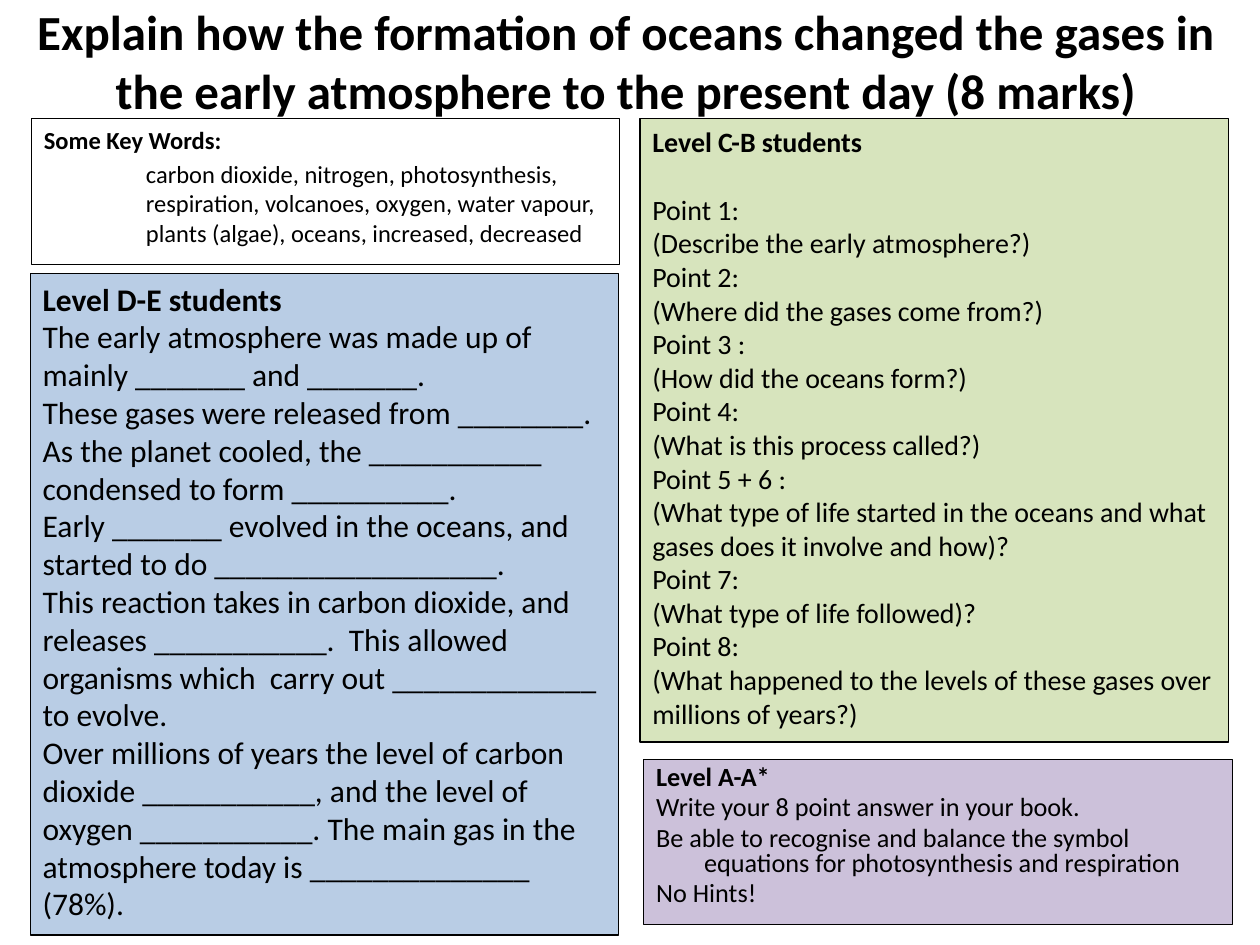
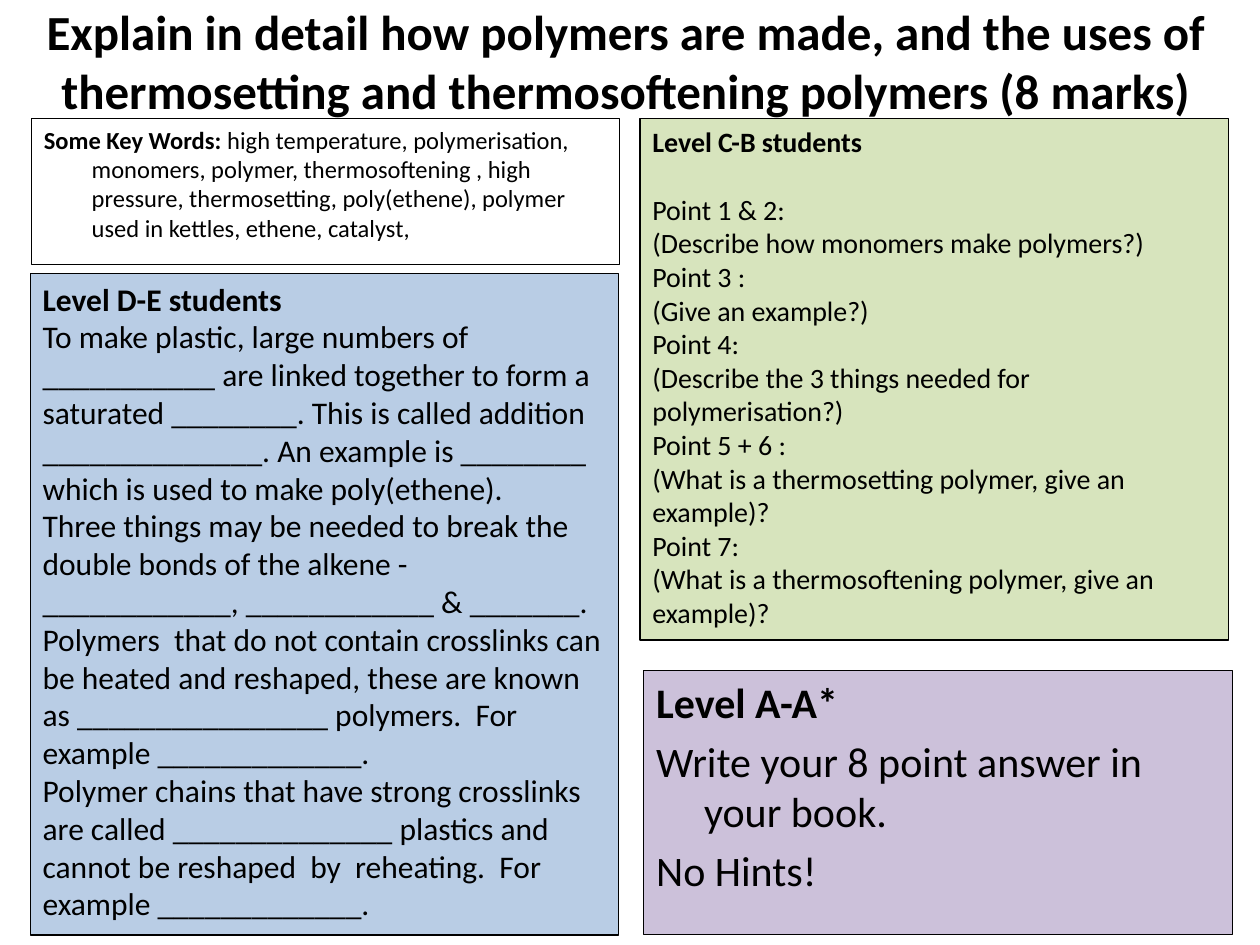
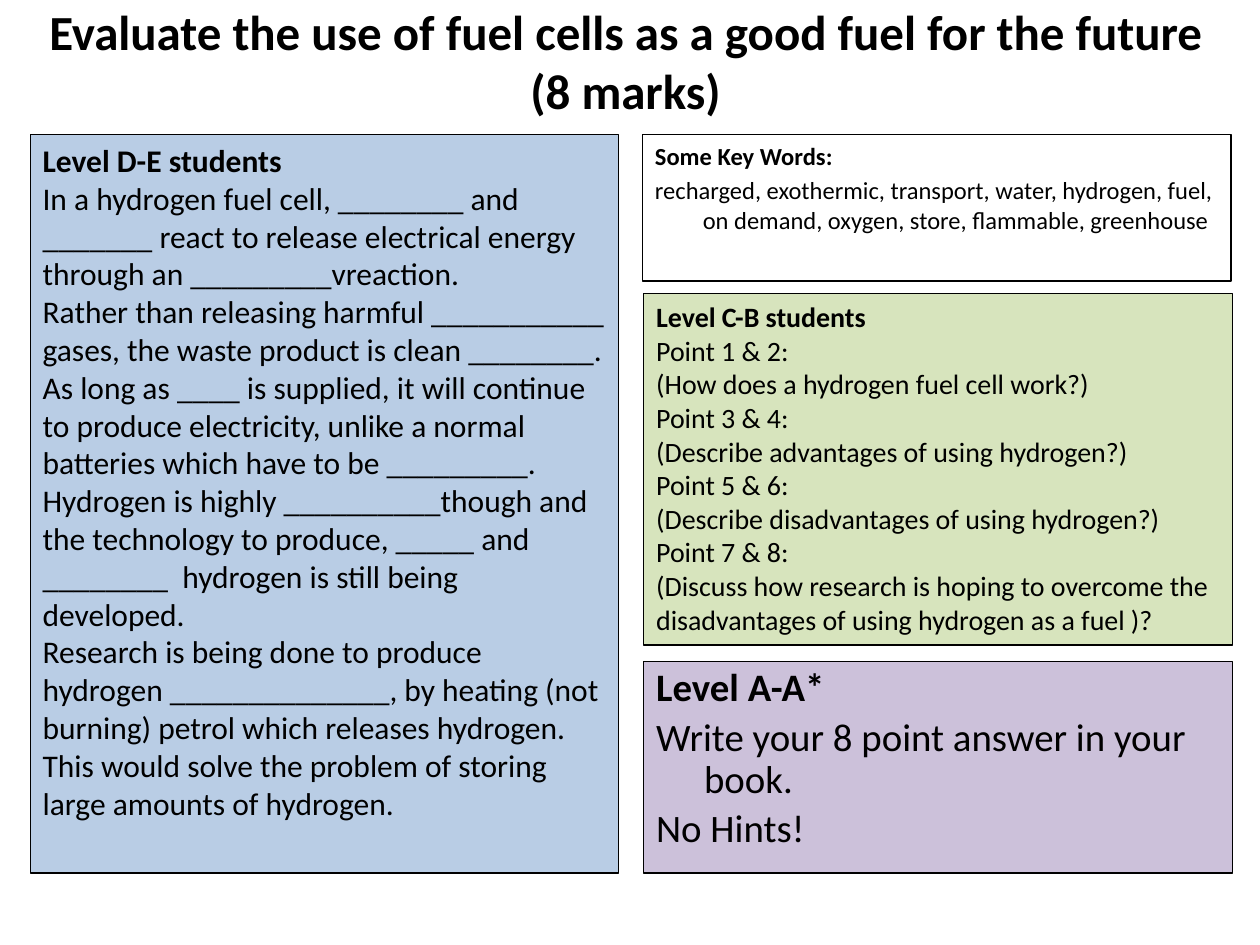
import dataclasses

import pptx
import pptx.dml.color
import pptx.enum.shapes
import pptx.enum.text
import pptx.util


@dataclasses.dataclass(frozen=True)
class Theme:
    font: str = "Calibri"
    ink: str = "000000"
    blue: str = "B9CDE5"
    green: str = "D7E4BD"
    purple: str = "CCC1DA"
    title_size: float = 28
    keyword_size: float = 14
    gap_fill_size: float = 18
    points_size: float = 16
    border: float = 0.75
    hanging: float = 0.38
    space_share: float = 0.2
    line_height: float = 1.22


THEME = Theme()
COLUMNS, ROWS = 100, 75
PANEL_WIDTH = 46.7
LEFT, RIGHT = 2.4, 51.1


def add_text(frame, text, size, lead="", bold=False, align=None, margin=0, hanging=0,
             before=0, after=0, line_spacing=None):
    """Append a paragraph, optionally opened by a bold lead."""
    para = frame.paragraphs[0]
    if para.runs:
        para = frame.add_paragraph()
    para.alignment = align or pptx.enum.text.PP_ALIGN.LEFT
    para.space_before = pptx.util.Pt(before)
    para.space_after = pptx.util.Pt(after)
    if line_spacing:
        para.line_spacing = line_spacing
    properties = para._p.get_or_add_pPr()
    properties.set("marL", str(pptx.util.Inches(margin + hanging)))
    properties.set("indent", str(-pptx.util.Inches(hanging)))

    def add_span(content, is_bold):
        span = para.add_run()
        span.text = content
        span.font.name = THEME.font
        span.font.size = pptx.util.Pt(size)
        span.font.bold = is_bold
        span.font.color.rgb = pptx.dml.color.RGBColor.from_string(THEME.ink)

    if lead:
        add_span(lead, True)
    for number, line in enumerate(text.split("\n")):
        if number:
            para.add_line_break()
        if line:
            add_span(line, bold)


class Worksheet:
    """Builds question pages on a grid of columns and rows."""

    def __init__(self):
        self.deck = pptx.Presentation()
        self.deck.slide_width = pptx.util.Inches(10)
        self.deck.slide_height = pptx.util.Inches(7.5)
        self.page = None

    def place(self, column, row, width, height):
        across = self.deck.slide_width / COLUMNS
        down = self.deck.slide_height / ROWS
        return round(column * across), round(row * down), round(width * across), round(height * down)

    def add_page(self, question):
        self.page = self.deck.slides.add_slide(self.deck.slide_layouts[6])
        box = self.page.shapes.add_textbox(*self.place(0.8, 1.7, 97.7, 6.2))
        box.text_frame.word_wrap = True
        box.text_frame.vertical_anchor = pptx.enum.text.MSO_ANCHOR.MIDDLE
        add_text(box.text_frame, question, THEME.title_size, bold=True,
                 align=pptx.enum.text.PP_ALIGN.CENTER)

    def add_panel(self, column, row, height, fill=None):
        box = self.page.shapes.add_shape(
            pptx.enum.shapes.MSO_SHAPE.RECTANGLE, *self.place(column, row, PANEL_WIDTH, height))
        box.shadow.inherit = False
        if fill:
            box.fill.solid()
            box.fill.fore_color.rgb = pptx.dml.color.RGBColor.from_string(fill)
        else:
            box.fill.background()
        box.line.color.rgb = pptx.dml.color.RGBColor.from_string(THEME.ink)
        box.line.width = pptx.util.Pt(THEME.border)
        box.text_frame.word_wrap = True
        box.text_frame.vertical_anchor = pptx.enum.text.MSO_ANCHOR.TOP
        return box.text_frame

    def add_keywords(self, column, row, words, inline=False, margin=0, hanging=THEME.hanging):
        frame = self.add_panel(column, row, 11.6)
        size = THEME.keyword_size
        before = size * THEME.space_share
        if inline:
            add_text(frame, words, size, lead="Some Key Words: ", hanging=hanging, before=before)
        else:
            add_text(frame, "Some Key Words:", size, bold=True, hanging=THEME.hanging, before=before)
            add_text(frame, words, size, margin=margin, hanging=hanging, before=before)

    def add_gap_fill(self, row, height, sentences):
        frame = self.add_panel(LEFT, row, height, THEME.blue)
        add_text(frame, "Level D-E students", THEME.gap_fill_size, bold=True)
        for sentence in sentences:
            add_text(frame, sentence, THEME.gap_fill_size)

    def add_points(self, column, row, height, points, heading_gap=True):
        frame = self.add_panel(column, row, height, THEME.green)
        size = THEME.points_size
        add_text(frame, "Level C-B students", size, bold=True,
                 after=size * THEME.line_height if heading_gap else 0)
        for label, hint in points:
            add_text(frame, label, size)
            add_text(frame, hint, size)

    def add_challenge(self, row, height, size, line_spacing=None, extra=()):
        frame = self.add_panel(RIGHT, row, height, THEME.purple)
        lines = ["Level A-A*", "Write your 8 point answer in your book.", *extra, "No Hints!"]
        for number, line in enumerate(lines):
            add_text(frame, line, size, bold=number == 0, hanging=THEME.hanging,
                     before=size * THEME.space_share, line_spacing=line_spacing)


def build_atmosphere(sheet):
    sheet.add_page("Explain how the formation of oceans changed the gases in the early atmosphere "
                   "to the present day (8 marks)")
    sheet.add_keywords(2.5, 9.4, "carbon dioxide, nitrogen, photosynthesis,  respiration, volcanoes, "
                       "oxygen, water vapour, plants (algae), oceans, increased, decreased",
                       margin=0.81, hanging=0)
    sheet.add_gap_fill(21.7, 52.5, [
        "The early atmosphere was made up of mainly _______ and _______.",
        "These gases were released from ________.",
        "As the planet cooled, the ___________ condensed to form __________.",
        "Early _______ evolved in the oceans, and started to do __________________.",
        "This reaction takes in carbon dioxide, and releases ___________.  This allowed organisms "
        "which  carry out _____________ to evolve.",
        "Over millions of years the level of carbon dioxide ___________, and the level of oxygen "
        "___________. The main gas in the atmosphere today is ______________ (78%).",
    ])
    sheet.add_points(50.8, 9.4, 49.5, [
        ("Point 1:", "(Describe the early atmosphere?)"),
        ("Point 2:", "(Where did the gases come from?)"),
        ("Point 3 :", "(How did the oceans form?)"),
        ("Point 4:", "(What is this process called?)"),
        ("Point 5 + 6 :", "(What type of life started in the oceans and what gases does it "
                          "involve and how)?"),
        ("Point 7:", "(What type of life followed)?"),
        ("Point 8:", "(What happened to the levels of these gases over millions of years?)"),
    ])
    sheet.add_challenge(60.3, 13.1, 15, line_spacing=0.8, extra=[
        "Be able to recognise and balance the symbol equations for photosynthesis and respiration"])


def build_polymers(sheet):
    sheet.add_page("Explain in detail how polymers are made, and the uses of thermosetting and "
                   "thermosoftening polymers (8 marks)")
    sheet.add_keywords(2.5, 9.4, "high temperature, polymerisation, monomers, polymer, "
                       "thermosoftening , high pressure, thermosetting, poly(ethene), polymer used "
                       "in kettles, ethene, catalyst,", inline=True)
    sheet.add_gap_fill(21.7, 52.5, [
        "To make plastic, large numbers of ___________ are linked together to form a saturated "
        "________. This is called addition ______________. An example is ________ which is used "
        "to make poly(ethene).",
        "Three things may be needed to break the double bonds of the alkene - ____________, "
        "____________ & _______.",
        "Polymers  that do not contain crosslinks can be heated and reshaped, these are known as "
        "________________ polymers.  For example _____________.",
        "Polymer chains that have strong crosslinks are called ______________ plastics and cannot "
        "be reshaped  by  reheating.  For example _____________.",
    ])
    sheet.add_points(50.8, 9.4, 41.4, [
        ("Point 1 & 2:", "(Describe how monomers make polymers?)"),
        ("Point 3 :", "(Give an example?)"),
        ("Point 4:", "(Describe the 3 things needed for polymerisation?)"),
        ("Point 5 + 6 :", "(What is a thermosetting polymer, give an example)?"),
        ("Point 7:", "(What is a thermosoftening polymer, give an example)?"),
    ])
    sheet.add_challenge(53.2, 21, 24)


def build_fuel_cells(sheet):
    sheet.add_page("Evaluate the use of fuel cells as a good fuel for the future\n(8 marks)")
    sheet.add_keywords(51, 10.7, "recharged, exothermic, transport, water, hydrogen, fuel, on demand, "
                       "oxygen, store, flammable, greenhouse")
    sheet.add_gap_fill(10.7, 58.6, [
        "In a hydrogen fuel cell, ________ and _______ react to release electrical energy through "
        "an _________vreaction.",
        "Rather than releasing harmful ___________ gases, the waste product is clean ________.",
        "As long as ____ is supplied, it will continue to produce electricity, unlike a normal "
        "batteries which have to be _________.",
        "Hydrogen is highly __________though and the technology to produce, _____ and ________  "
        "hydrogen is still being developed.",
        "Research is being done to produce hydrogen ______________, by heating (not burning) petrol "
        "which releases hydrogen. This would solve the problem of storing large amounts of hydrogen.",
    ])
    sheet.add_points(RIGHT, 23.3, 27.9, [
        ("Point 1 & 2:", "(How does a hydrogen fuel cell work?)"),
        ("Point 3 & 4:", "(Describe advantages of using hydrogen?)"),
        ("Point 5 & 6:", "(Describe disadvantages of using hydrogen?)"),
        ("Point 7 & 8:", "(Discuss how research is hoping to overcome the disadvantages of using "
                         "hydrogen as a fuel )?"),
    ], heading_gap=False)
    sheet.add_challenge(52.5, 16.8, 22.2, line_spacing=0.9)


def main():
    sheet = Worksheet()
    for build in (build_atmosphere, build_polymers, build_fuel_cells):
        build(sheet)
    sheet.deck.save("out.pptx")


if __name__ == "__main__":
    main()
